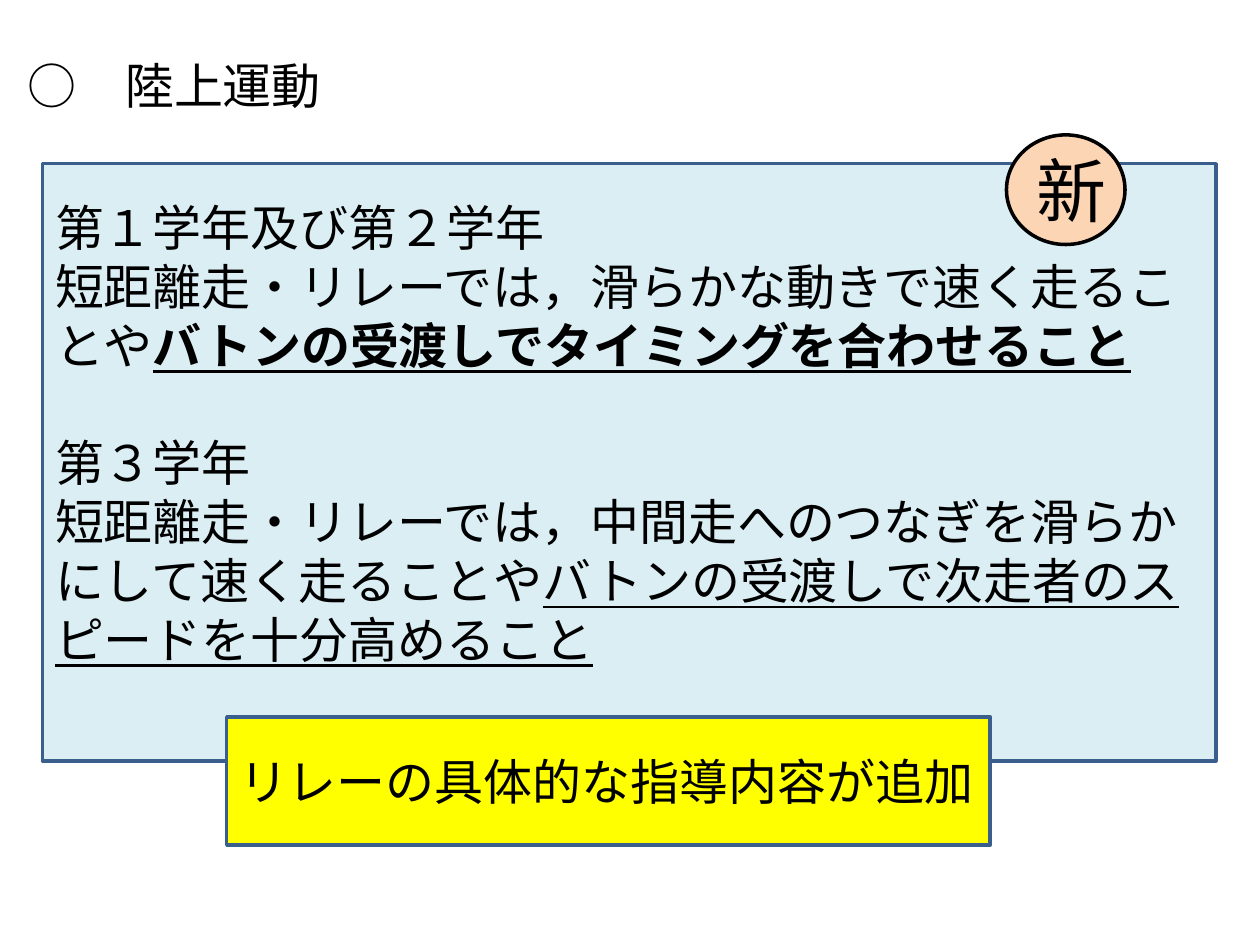
from lxml import etree
from pptx import Presentation
from pptx.dml.color import RGBColor
from pptx.enum import shapes, text
from pptx.oxml import ns
from pptx.util import Cm, Pt

COLORS = {
    "ink": "000000",
    "panel": "DBEEF4",
    "border": "3A5F8C",
    "badge": "FCD5B5",
    "callout": "FFFF00",
}
RECT = shapes.MSO_SHAPE.RECTANGLE
OVAL = shapes.MSO_SHAPE.OVAL
LEFT, CENTER = text.PP_ALIGN.LEFT, text.PP_ALIGN.CENTER
JAPANESE = "Noto Sans CJK JP"


def add_box(s, kind, box, fill, line):
    sp = s.shapes.add_shape(kind, *(Cm(v) for v in box))
    sp.shadow.inherit = False
    sp.fill.solid()
    sp.fill.fore_color.rgb = RGBColor.from_string(COLORS[fill])
    sp.line.color.rgb = RGBColor.from_string(COLORS[line])
    sp.line.width = Pt(2)
    return sp


def style(sp, font, size=28, align=LEFT):
    tf = sp.text_frame
    tf.word_wrap = True
    tf.vertical_anchor = text.MSO_ANCHOR.MIDDLE
    for p in tf.paragraphs:
        p.alignment = align
        for r in p.runs:
            r.font.name = font
            r.font.size = Pt(size)
            r.font.color.rgb = RGBColor.from_string(COLORS["ink"])
            ea = etree.Element(ns.qn("a:ea"), typeface=JAPANESE)
            r.font._element.find(ns.qn("a:latin")).addnext(ea)


prs = Presentation()
prs.slide_width, prs.slide_height = Cm(25.4), Cm(19.05)
s = prs.slides.add_slide(prs.slide_layouts[6])

title = s.shapes.add_textbox(Cm(0.3), Cm(0.71), Cm(8.51), Cm(2.01))
title.text_frame.text = "○\u3000陸上運動".replace("\u3000", "　")
style(title, "Calibri")

panel = add_box(s, RECT, (0.86, 3.3, 23.65, 12.04), "panel", "border")
grades = [
    ("第１学年及び第２学年",
     "短距離走・リレーでは，滑らかな動きで速く走ることや",
     "バトンの受渡しでタイミングを合わせること", True),
    ("第３学年",
     "短距離走・リレーでは，中間走へのつなぎを滑らかにして速く走ることや",
     "バトンの受渡しで次走者のスピードを十分高めること", False),
]
tf = panel.text_frame
tf.margin_bottom = Cm(1.31)
for i, (grade, content, addition, bold) in enumerate(grades):
    p = tf.add_paragraph() if i else tf.paragraphs[0]
    p.text = grade
    p.space_before = Pt(33.5 * i)
    p = tf.add_paragraph()
    p.text = content
    r = p.add_run()
    r.text = addition
    r.font.underline = True
    r.font.bold = bold
style(panel, "Calibri")
for p in tf.paragraphs[1::2]:
    for r in p.runs:
        r.font.name = JAPANESE

badge = add_box(s, OVAL, (20.29, 2.72, 2.39, 2.21), "badge", "ink")
badge.text_frame.text = "新"
style(badge, "Calibri", 40, CENTER)

callout = add_box(s, RECT, (4.57, 14.45, 15.39, 2.59), "callout", "border")
callout.text_frame.text = "リレーの具体的な指導内容が追加"
style(callout, "Arial")

prs.save("out.pptx")
